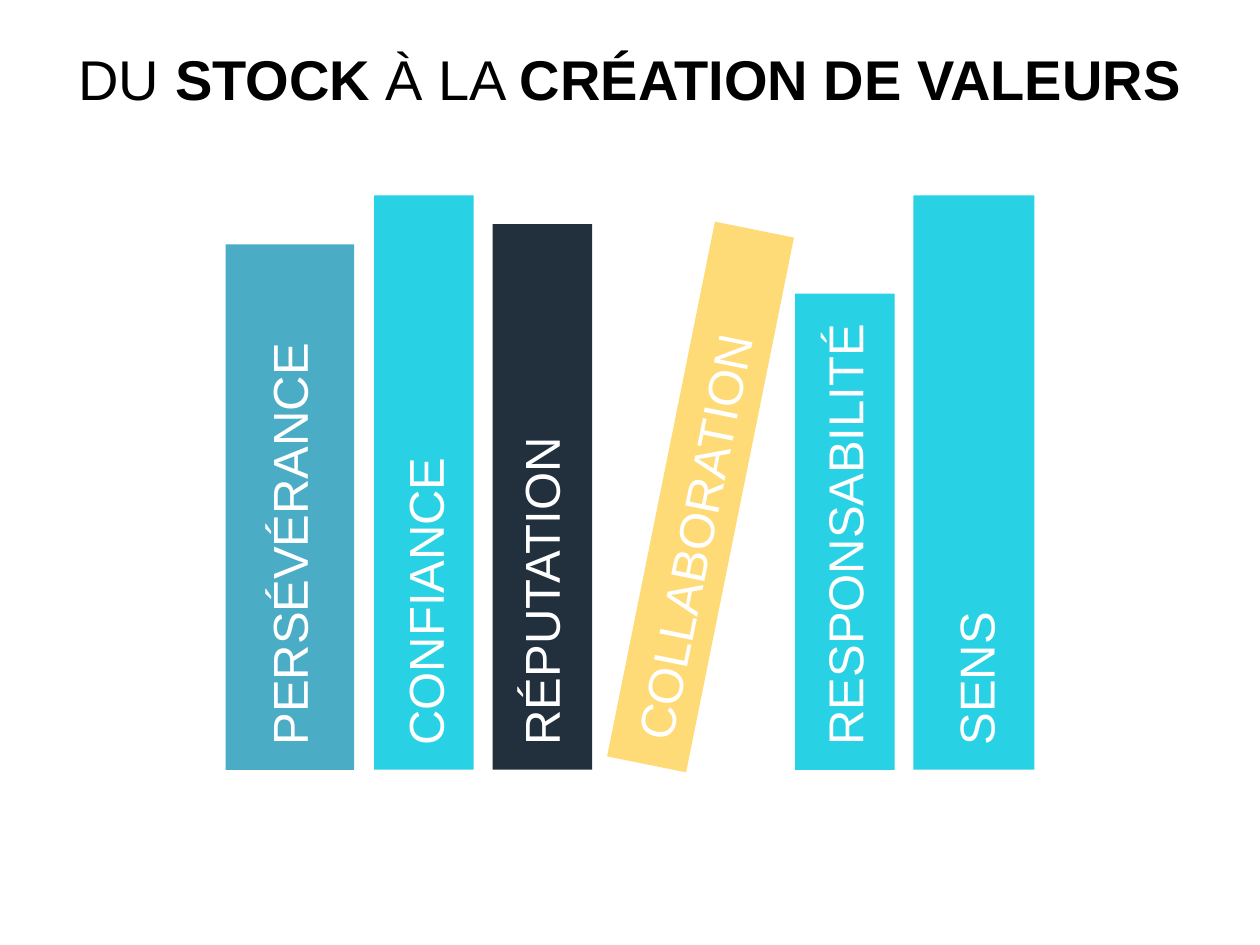
from pptx import Presentation
from pptx.dml.color import RGBColor
from pptx.enum import shapes, text
from pptx.util import Inches, Pt

BLACK = RGBColor(0x00, 0x00, 0x00)
WHITE = RGBColor(0xFF, 0xFF, 0xFF)
BLUE = RGBColor(0x4B, 0xAC, 0xC6)
CYAN = RGBColor(0x28, 0xD2, 0xE4)
NAVY = RGBColor(0x22, 0x30, 0x3E)
YELLOW = RGBColor(0xFF, 0xDB, 0x77)

SHELF = 6.11         # bottom edge of the books
LABEL_START = 6.015  # where the upright labels begin
LABEL_HEIGHT = 0.57

prs = Presentation()
prs.slide_width, prs.slide_height = Inches(10), Inches(7.5)
slide = prs.slides.add_slide(prs.slide_layouts[5])

# Title
title = slide.shapes.title
title.left, title.top = Inches(0), Inches(0.3)
title.width, title.height = Inches(10), Inches(1.25)
title.text_frame.vertical_anchor = text.MSO_ANCHOR.TOP
heading = title.text_frame.paragraphs[0]
heading.alignment = text.PP_ALIGN.CENTER
heading.font.size = Pt(32)
heading.font.name = "Arial"
heading.font.color.rgb = BLACK
for words, bold in [("DU ", False), ("STOCK ", True), ("À LA ", False),
                    ("CRÉATION DE VALEURS", True)]:
    run = heading.add_run()
    run.text = words
    run.font.bold = bold

# Books: value, colour, left, width, height, tilt, label centre x, label length
books = [
    ("PERSÉVÉRANCE", BLUE, 1.79, 1.02, 4.17, 0, 2.29, 3.43),
    ("CONFIANCE", CYAN, 2.97, 0.79, 4.56, 0, 3.37, 2.51),
    ("RÉPUTATION", NAVY, 3.91, 0.79, 4.33, 0, 4.29, 2.67),
    ("COLLABORATION", YELLOW, 5.24, 0.64, 4.33, 11.4, 5.51, 3.51),
    ("RESPONSABILITÉ", CYAN, 6.31, 0.79, 3.78, 0, 6.7, 3.58),
    ("SENS", CYAN, 7.25, 0.96, 4.56, 0, 7.74, 1.27),
]
for value, colour, left, width, height, tilt, label_x, length in books:
    book = slide.shapes.add_shape(
        shapes.MSO_SHAPE.RECTANGLE, Inches(left), Inches(SHELF - height),
        Inches(width), Inches(height))
    book.rotation = tilt
    book.shadow.inherit = False
    book.fill.solid()
    book.fill.fore_color.rgb = colour
    book.line.fill.background()

    # Label reading upwards along the spine
    label_y = 4.24 if tilt else LABEL_START - length / 2
    label = slide.shapes.add_textbox(
        Inches(label_x - length / 2), Inches(label_y - LABEL_HEIGHT / 2),
        Inches(length), Inches(LABEL_HEIGHT))
    label.rotation = 270 + tilt
    label.text_frame.word_wrap = False
    label.text_frame.auto_size = text.MSO_AUTO_SIZE.SHAPE_TO_FIT_TEXT
    spine = label.text_frame.paragraphs[0]
    spine.text = value
    spine.font.size = Pt(28)
    spine.font.name = "Arial"
    spine.font.color.rgb = WHITE

prs.save("out.pptx")
